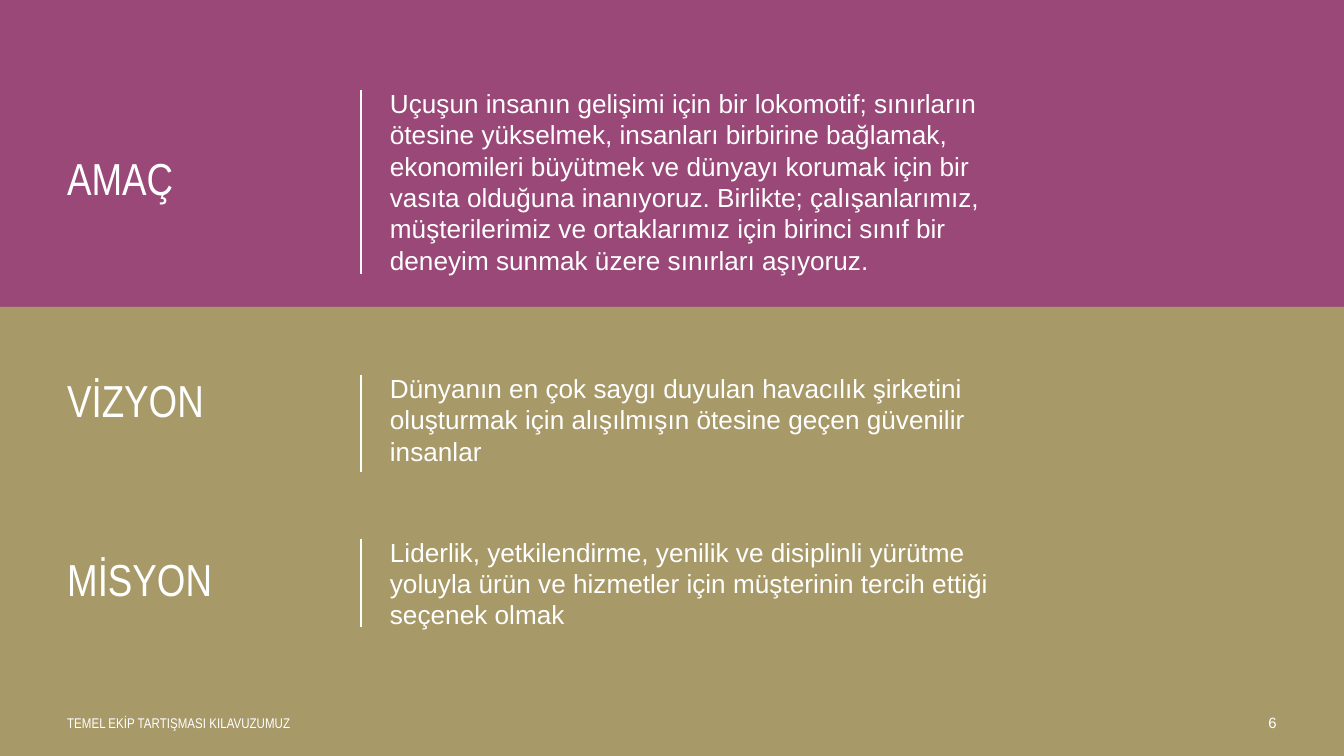
"""Build the purpose, vision and mission slide."""
from lxml.etree import SubElement
from pptx import Presentation
from pptx.dml.color import RGBColor as RGB
from pptx.enum.shapes import MSO_CONNECTOR as LINE, MSO_SHAPE as SHAPE
from pptx.enum.text import MSO_ANCHOR as ANCHOR, PP_ALIGN as ALIGN
from pptx.oxml.ns import qn
from pptx.util import Cm, Pt


def paint(fill, tone):
    fill.solid()
    fill.fore_color.rgb = RGB.from_string(tone)


def write(words, left, top, wide, high, font, para={}, frame={}):
    text = slide.shapes.add_textbox(Cm(left), Cm(top), Cm(wide), Cm(high)).text_frame
    base = {"margin_left": 0, "margin_right": 0, "margin_top": 0,
            "margin_bottom": 0, "word_wrap": True}
    line = text.paragraphs[0]
    run = line.add_run()
    run.text = words
    for item, looks in ((text, {**base, **frame}), (line, para), (run.font, font)):
        for name, value in looks.items():
            setattr(item, name, value)
    paint(run.font.fill, WHITE)


WHITE, PLUM, SAND = "FFFFFF", "994878", "A89968"
HEAD = {"name": "Arial Narrow", "size": Pt(24)}
BODY = {"name": "Arial", "size": Pt(14)}
FOOT = {"name": "Arial Narrow", "size": Pt(7.5)}
PAGE = {"name": "Arial", "size": Pt(8)}
EDGE, RULE, COL = 1.27, 6.83, 7.37

deck = Presentation()
deck.slide_width, deck.slide_height = Cm(25.4), Cm(14.29)
slide = deck.slides.add_slide(deck.slide_layouts[6])
paint(slide.background.fill, PLUM)

band = slide.shapes.add_shape(SHAPE.RECTANGLE, 0, Cm(5.8), Cm(25.4), Cm(8.49))
band.shadow.inherit = False
paint(band.fill, SAND)
band.line.fill.background()

write("TEMEL EKİP TARTIŞMASI KILAVUZUMUZ", EDGE, 13.46, 11.05, 0.51, FOOT,
      frame={"margin_top": Cm(0.05), "word_wrap": False})
write("6", 22.86, 13.46, 1.27, 0.51, PAGE, {"alignment": ALIGN.RIGHT},
      {"margin_top": Cm(0.03)})

rows = [
    ("AMAÇ", 1.65, 3.53, 4.29, 3.48,
     "Uçuşun insanın gelişimi için bir lokomotif; sınırların ötesine yükselmek, "
     "insanları birbirine bağlamak, ekonomileri büyütmek ve dünyayı korumak için "
     "bir vasıta olduğuna inanıyoruz. Birlikte; çalışanlarımız, müşterilerimiz ve "
     "ortaklarımız için birinci sınıf bir deneyim sunmak üzere sınırları aşıyoruz."),
    ("VİZYON", 7.04, 1.14, 1.65, 1.83,
     "Dünyanın en çok saygı duyulan havacılık şirketini oluşturmak için "
     "alışılmışın ötesine geçen güvenilir insanlar"),
    ("MİSYON", 10.13, 1.73, 2.08, 1.68,
     "Liderlik, yetkilendirme, yenilik ve disiplinli yürütme yoluyla ürün ve "
     "hizmetler için müşterinin tercih ettiği seçenek olmak"),
]
for title, top, high, deep, tall, words in rows:
    write(words, COL, top, 12.19, deep, BODY, {"space_after": Pt(8)})
    write(title, EDGE, top, 5.56, high, HEAD, {"line_spacing": 0.9},
          {"vertical_anchor": ANCHOR.MIDDLE})
    start = top + 0.05
    rule = slide.shapes.add_connector(
        LINE.STRAIGHT, Cm(RULE), Cm(start), Cm(RULE), Cm(start + tall))
    paint(rule.line.fill, WHITE)
    rule.line.width = Pt(1)
    SubElement(rule._element.spPr, qn("a:effectLst"))

deck.save("out.pptx")
